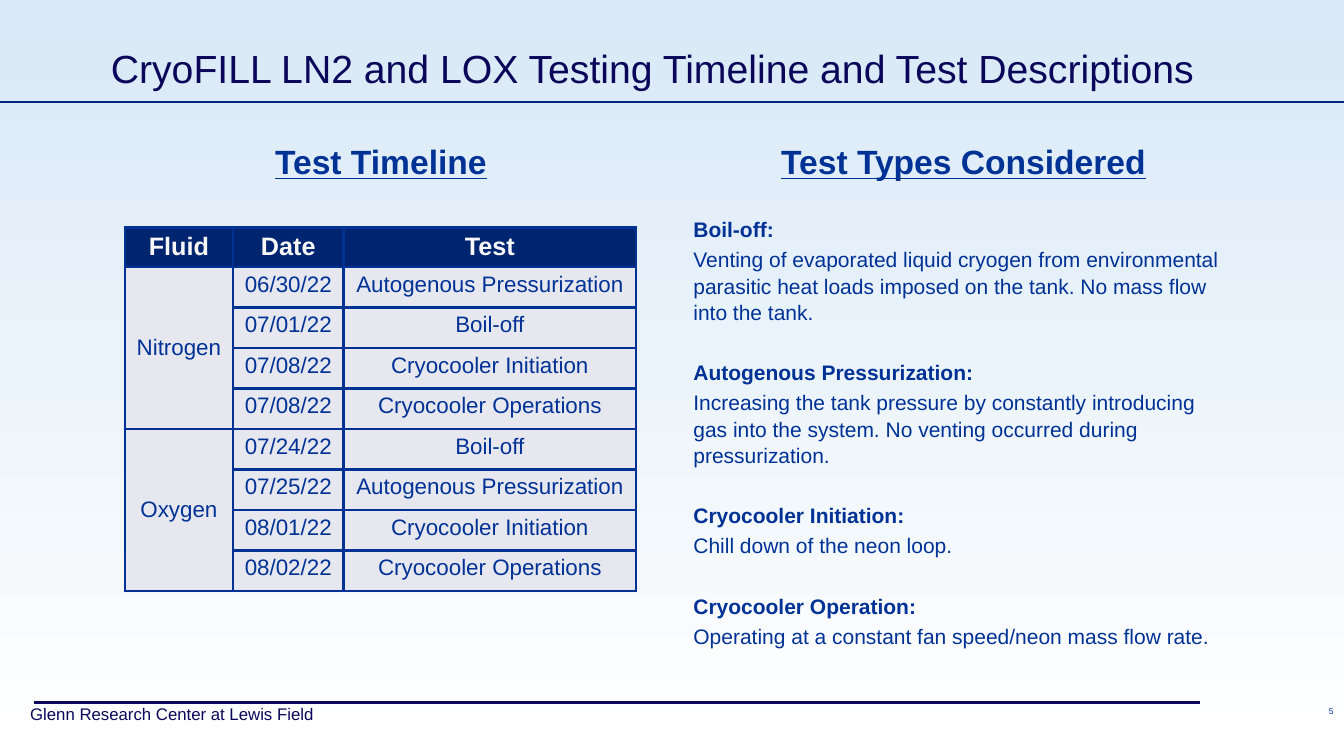
"""Build the CryoFILL testing timeline and test descriptions slide."""
from dataclasses import dataclass

from lxml import etree
from pptx import Presentation
from pptx import util as u
from pptx.dml.color import RGBColor
from pptx.enum import shapes, text
from pptx.oxml import ns

NAVY, BLUE, HEADER, PALE = "0A075A", "003296", "002570", "E7E8EF"
LEFT, CENTER, RIGHT = text.PP_ALIGN.LEFT, text.PP_ALIGN.CENTER, text.PP_ALIGN.RIGHT


@dataclass
class Box:
    left: float
    top: float
    width: float
    height: float

    def lengths(self):
        return [u.Cm(value) for value in (self.left, self.top, self.width, self.height)]


@dataclass
class Rule:
    start: float
    end: float
    top: float
    color: str
    weight: float


@dataclass
class Campaign:
    fluid: str
    tests: list[tuple[str, str]]


@dataclass
class TestType:
    name: str
    description: str


RULES = [Rule(0.86, 30.23, 17.7, NAVY, 2.25), Rule(0, 33.87, 2.57, "00297F", 1.5)]
CAMPAIGNS = [
    Campaign("Nitrogen", [
        ("06/30/22", "Autogenous Pressurization"),
        ("07/01/22", "Boil-off"),
        ("07/08/22", "Cryocooler Initiation"),
        ("07/08/22", "Cryocooler Operations"),
    ]),
    Campaign("Oxygen", [
        ("07/24/22", "Boil-off"),
        ("07/25/22", "Autogenous Pressurization"),
        ("08/01/22", "Cryocooler Initiation"),
        ("08/02/22", "Cryocooler Operations"),
    ]),
]
TEST_TYPES = [
    TestType("Boil-off:", "Venting of evaporated liquid cryogen from environmental parasitic "
             "heat loads imposed on the tank. No mass flow into the tank."),
    TestType("Autogenous Pressurization:", "Increasing the tank pressure by constantly "
             "introducing gas into the system. No venting occurred during pressurization."),
    TestType("Cryocooler Initiation:", "Chill down of the neon loop."),
    TestType("Cryocooler Operation:", "Operating at a constant fan speed/neon mass flow rate."),
]


def rgb(color: str) -> RGBColor:
    return RGBColor.from_string(color)


def write(paragraph, content: str, size: float, color: str = BLUE, bold: bool = False,
          underline: bool = False, align=LEFT, before: float = 0, spacing: float = 1.0) -> None:
    paragraph.alignment = align
    paragraph.space_before = u.Pt(before)
    paragraph.line_spacing = spacing
    run = paragraph.add_run()
    run.text = content
    run.font.name = "Arial"
    run.font.size = u.Pt(size)
    run.font.bold = bold
    run.font.underline = underline
    run.font.color.rgb = rgb(color)


def place(shape, box: Box, anchor=text.MSO_ANCHOR.TOP):
    shape.left, shape.top, shape.width, shape.height = box.lengths()
    frame = shape.text_frame
    frame.word_wrap = True
    frame.auto_size = text.MSO_AUTO_SIZE.NONE
    frame.vertical_anchor = anchor
    return frame


def remove_bullet(paragraph) -> None:
    properties = paragraph._p.get_or_add_pPr()
    properties.set("marL", "0")
    properties.set("indent", "0")
    etree.SubElement(properties, ns.qn("a:buNone"))


def fill_body(placeholder, left: float, heading: str, test_types: list[TestType]) -> None:
    frame = place(placeholder, Box(left, 3.38, 14.12, 13.13))
    remove_bullet(frame.paragraphs[0])
    write(frame.paragraphs[0], heading, 24, bold=True, underline=True, align=CENTER, spacing=1.05)
    for test_type in test_types:
        for content, bold, before in ((test_type.name, True, 24),
                                      (test_type.description, False, 2.75)):
            paragraph = frame.add_paragraph()
            remove_bullet(paragraph)
            write(paragraph, content, 15, bold=bold, before=before, spacing=1.05)


def add_label(slide, box: Box, content: str, **style) -> None:
    frame = place(slide.shapes.add_textbox(*box.lengths()), box)
    write(frame.paragraphs[0], content, **style)


def add_rule(slide, rule: Rule) -> None:
    top = u.Cm(rule.top)
    connector = slide.shapes.add_connector(
        shapes.MSO_CONNECTOR.STRAIGHT, u.Cm(rule.start), top, u.Cm(rule.end), top)
    connector.line.color.rgb = rgb(rule.color)
    connector.line.width = u.Pt(rule.weight)
    etree.SubElement(connector._element.spPr, ns.qn("a:effectLst"))


def style_cell(cell, color: str) -> None:
    cell.fill.solid()
    cell.fill.fore_color.rgb = rgb(color)
    properties = cell._tc.get_or_add_tcPr()
    for index, side in enumerate(("lnL", "lnR", "lnT", "lnB")):
        border = etree.Element(ns.qn(f"a:{side}"), w=str(u.Pt(2.25)))
        solid = etree.SubElement(border, ns.qn("a:solidFill"))
        etree.SubElement(solid, ns.qn("a:srgbClr"), val=BLUE)
        properties.insert(index, border)


def add_timeline(slide) -> None:
    row_count = 1 + sum(len(campaign.tests) for campaign in CAMPAIGNS)
    box = Box(3.15, 5.74, 12.88, 9.15)
    table = slide.shapes.add_table(row_count, 3, *box.lengths()).table
    table.horz_banding = False
    for column, width in zip(table.columns, (2.72, 2.79, 7.37)):
        column.width = u.Cm(width)
    for index, row in enumerate(table.rows):
        row.height = u.Cm(1.02 if index else 0.99)
        for cell in row.cells:
            style_cell(cell, PALE if index else HEADER)
    for column, heading in enumerate(("Fluid", "Date", "Test")):
        write(table.cell(0, column).text_frame.paragraphs[0], heading, 18,
              color="F8F8F8", bold=True, align=CENTER)
    first = 1
    for campaign in CAMPAIGNS:
        fluid = table.cell(first, 0)
        fluid.merge(table.cell(first + len(campaign.tests) - 1, 0))
        fluid.vertical_anchor = text.MSO_ANCHOR.MIDDLE
        write(fluid.text_frame.paragraphs[0], campaign.fluid, 16, align=CENTER)
        for row, test in enumerate(campaign.tests, first):
            for column, content in enumerate(test, 1):
                write(table.cell(row, column).text_frame.paragraphs[0], content, 16, align=CENTER)
        first += len(campaign.tests)


def paint_background(slide) -> None:
    fill = slide.background.fill
    fill.gradient()
    fill.gradient_angle = 270
    for stop, position, color in zip(fill.gradient_stops, (0, 1), ("D9E9F7", "FFFFFF")):
        stop.position = position
        stop.color.rgb = rgb(color)


def main() -> None:
    presentation = Presentation()
    presentation.slide_width, presentation.slide_height = u.Cm(33.87), u.Cm(19.05)
    slide = presentation.slides.add_slide(presentation.slide_layouts.get_by_name("Two Content"))
    paint_background(slide)
    title = place(slide.shapes.title, Box(2.54, 0.66, 28.78, 2.08), text.MSO_ANCHOR.MIDDLE)
    write(title.paragraphs[0], "CryoFILL LN2 and LOX Testing Timeline and Test Descriptions",
          28, color=NAVY)
    fill_body(slide.placeholders[1], 2.54, "Test Timeline", [])
    fill_body(slide.placeholders[2], 17.22, "Test Types Considered", TEST_TYPES)
    add_label(slide, Box(0.51, 17.6, 10.19, 0.76), "Glenn Research Center at Lewis Field",
              size=12, color=NAVY)
    add_label(slide, Box(32.56, 17.68, 1.3, 0.51), "5", size=6, align=RIGHT)
    for rule in RULES:
        add_rule(slide, rule)
    add_timeline(slide)
    presentation.save("out.pptx")


if __name__ == "__main__":
    main()
